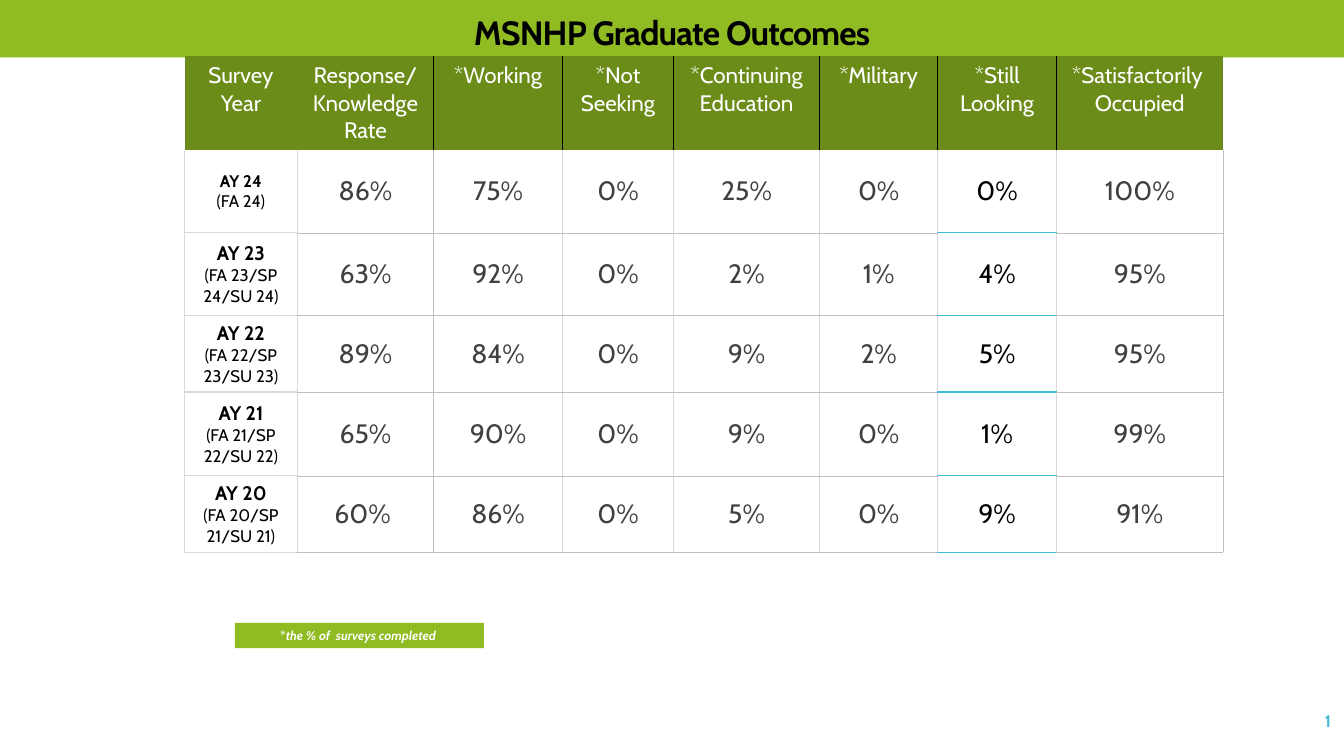
from pptx import Presentation
from pptx.dml.color import RGBColor
from pptx.enum.shapes import MSO_SHAPE
from pptx.enum.text import MSO_ANCHOR, PP_ALIGN
from pptx.oxml import parse_xml
from pptx.oxml.ns import nsdecls
from pptx.util import Inches, Pt

RECT = MSO_SHAPE.RECTANGLE
TOP, MIDDLE, BOTTOM = MSO_ANCHOR.TOP, MSO_ANCHOR.MIDDLE, MSO_ANCHOR.BOTTOM
CENTER, RIGHT = PP_ALIGN.CENTER, PP_ALIGN.RIGHT

FONT = "Cabin"
GREEN, DARK_GREEN, TEAL = "90BB23", "6C8C1A", "40BAD2"
WHITE, BLACK, GREY = "FFFFFF", "000000", "404040"
HAIRLINE = ("BFBFBF", 0.25)
GREY_LINE = ("D9D9D9", 1)
TEAL_LINE = (TEAL, 1)
BLACK_LINE = (BLACK, 1)
NO_STYLE = "{2D5ABB26-0587-4C30-8999-92F81FD0307C}"

COL_WIDTHS = [1.12, 1.35, 1.28, 1.1, 1.45, 1.17, 1.18, 1.65]
ROW_HEIGHTS = [0.93, 0.82, 0.82, 0.76, 0.83, 0.76]
LOOKING = 6
HEADERS = [
    ["Survey Year"], ["Response/", "Knowledge", "Rate"], ["*Working"],
    ["*Not Seeking"], ["*Continuing Education"], ["*Military"],
    ["*Still Looking"], ["*Satisfactorily ", "Occupied"],
]
OUTCOMES = [
    ("AY 24", "(FA 24)", 12, ["86%", "75%", "0%", "25%", "0%", "0%", "100%"]),
    ("AY 23", "(FA 23/SP 24/SU 24)", 14, ["63%", "92%", "0%", "2%", "1%", "4%", "95%"]),
    ("AY 22", "(FA 22/SP 23/SU 23)", 14, ["89%", "84%", "0%", "9%", "2%", "5%", "95%"]),
    ("AY 21", "(FA 21/SP 22/SU 22)", 14, ["65%", "90%", "0%", "9%", "0%", "1%", "99%"]),
    ("AY 20", "(FA 20/SP 21/SU 21)", 14, ["60% ", "86%", "0%", "5%", "0%", "9%", "91%"]),
]


def rgb(value):
    return RGBColor.from_string(value)


def run(text, size, color, bold=False, italic=False):
    return text, size, color, bold, italic


class Deck:
    def __init__(self):
        self.prs = Presentation()
        self.prs.slide_width = Inches(13.33)
        self.prs.slide_height = Inches(7.5)
        self.s = self.prs.slides.add_slide(self.prs.slide_layouts[5])

    def add_text(self, tf, paragraphs, align=CENTER):
        for i, runs in enumerate(paragraphs):
            p = tf.paragraphs[0] if i == 0 else tf.add_paragraph()
            p.alignment = align
            for text, size, color, bold, italic in runs:
                r = p.add_run()
                r.text = text
                r.font.name = FONT
                r.font.size = Pt(size)
                r.font.bold = bold
                r.font.italic = italic
                r.font.color.rgb = rgb(color)

    def title(self, text, x, y, w, h):
        sp = self.s.shapes.title
        sp.left, sp.top, sp.width, sp.height = map(Inches, (x, y, w, h))
        sp.fill.solid()
        sp.fill.fore_color.rgb = rgb(GREEN)
        tf = sp.text_frame
        tf.vertical_anchor = BOTTOM
        self.add_text(tf, [[run(text, 24, BLACK, True)]])
        p = tf.paragraphs[0]
        p.line_spacing = 0.9
        p.runs[0]._r.get_or_add_rPr().set("spc", "-60")

    def text(self, paragraphs, x, y, w, h, align):
        sp = self.s.shapes.add_textbox(*map(Inches, (x, y, w, h)))
        sp.text_frame.word_wrap = True
        sp.text_frame.vertical_anchor = MIDDLE
        self.add_text(sp.text_frame, paragraphs, align)

    def label(self, paragraphs, x, y, w, h, fill):
        sp = self.s.shapes.add_shape(RECT, *map(Inches, (x, y, w, h)))
        sp.shadow.inherit = False
        sp.fill.solid()
        sp.fill.fore_color.rgb = rgb(fill)
        sp.line.fill.background()
        sp.text_frame.word_wrap = True
        sp.text_frame.vertical_anchor = TOP
        self.add_text(sp.text_frame, paragraphs)

    def table(self, x, y, widths, heights):
        size = Inches(sum(widths)), Inches(sum(heights))
        frame = self.s.shapes.add_table(len(heights), len(widths), Inches(x), Inches(y), *size)
        tbl = frame.table
        tbl.first_row = tbl.horz_banding = False
        tbl._tbl.tblPr[0].text = NO_STYLE
        for col, w in zip(tbl.columns, widths):
            col.width = Inches(w)
        for row, h in zip(tbl.rows, heights):
            row.height = Inches(h)
        return tbl

    def cell(self, cell, paragraphs, fill, anchor, borders):
        cell.margin_left = cell.margin_right = Inches(0.12)
        cell.margin_top = cell.margin_bottom = Inches(0.06)
        cell.vertical_anchor = anchor
        cell.fill.solid()
        cell.fill.fore_color.rgb = rgb(fill)
        self.add_text(cell.text_frame, paragraphs)
        lines = [(side, borders[side]) for side in "LRTB" if borders.get(side)]
        for i, (side, (color, width)) in enumerate(lines):
            cell._tc.tcPr.insert(i, parse_xml(
                f'<a:ln{side} {nsdecls("a")} w="{Pt(width)}"><a:solidFill>'
                f'<a:srgbClr val="{color}"/></a:solidFill></a:ln{side}>'))


def header_borders(c):
    return {"L": BLACK_LINE if c > 1 else None,
            "R": BLACK_LINE if 0 < c < len(HEADERS) - 1 else None}


def body_borders(row, c):
    across = {0: GREY_LINE, LOOKING: TEAL_LINE}.get(c, HAIRLINE)
    return {"L": HAIRLINE if c == 2 else GREY_LINE,
            "R": HAIRLINE if c in (1, 7) else GREY_LINE,
            "T": across if row > 1 else None,
            "B": across}


def main():
    deck = Deck()
    deck.text([[run("1", 12, TEAL, True)]], 11.63, 6.95, 1.67, 0.4, RIGHT)
    deck.title("MSNHP Graduate Outcomes", 0, 0, 13.33, 0.57)

    tbl = deck.table(1.83, 0.56, COL_WIDTHS, ROW_HEIGHTS)
    for c, words in enumerate(HEADERS):
        paragraphs = [[run(line, 16, WHITE)] for line in words]
        deck.cell(tbl.cell(0, c), paragraphs, DARK_GREEN, TOP, header_borders(c))
    for row, (year, terms, size, rates) in enumerate(OUTCOMES, 1):
        survey = [[run(year, size, BLACK, True)], [run(terms, 12, BLACK)]]
        deck.cell(tbl.cell(row, 0), survey, WHITE, MIDDLE, body_borders(row, 0))
        for c, rate in enumerate(rates, 1):
            color = BLACK if c == LOOKING else GREY
            deck.cell(tbl.cell(row, c), [[run(rate, 19, color)]], WHITE, MIDDLE,
                      body_borders(row, c))

    note = [run("*", 9, WHITE, True),
            run("the % of  surveys completed ", 9, WHITE, True, True)]
    deck.label([note], 2.33, 6.18, 2.47, 0.25, GREEN)
    deck.prs.save("out.pptx")


if __name__ == "__main__":
    main()
